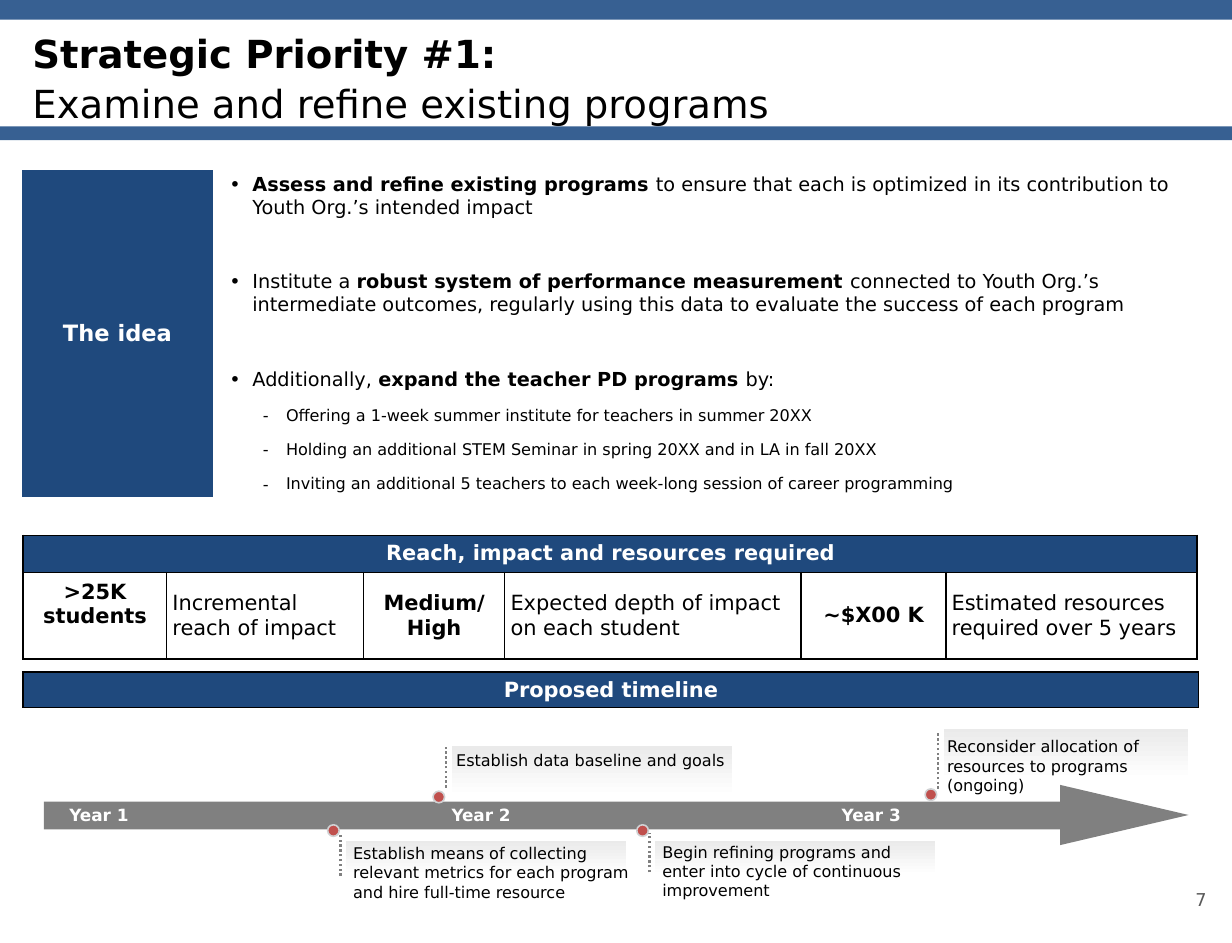
from dataclasses import dataclass
from lxml import etree
from pptx import Presentation
from pptx.dml.color import RGBColor
from pptx.enum.dml import MSO_LINE
from pptx.enum.shapes import MSO_CONNECTOR, MSO_SHAPE
from pptx.enum.text import MSO_ANCHOR, PP_ALIGN
from pptx.oxml.ns import qn
from pptx.util import Inches, Pt

RECT, OVAL, HEAD = MSO_SHAPE.RECTANGLE, MSO_SHAPE.OVAL, MSO_SHAPE.FLOWCHART_EXTRACT
STRAIGHT, DOTS = MSO_CONNECTOR.STRAIGHT, MSO_LINE.ROUND_DOT
LEFT, MID, RIGHT = PP_ALIGN.LEFT, PP_ALIGN.CENTER, PP_ALIGN.RIGHT
TOP, CENTRE = MSO_ANCHOR.TOP, MSO_ANCHOR.MIDDLE
TITLE_ONLY = 5


@dataclass(frozen=True)
class Theme:
    font: str = "DejaVu Sans"
    band: str = "376092"
    navy: str = "1F497D"
    black: str = "000000"
    white: str = "FFFFFF"
    grey: str = "808080"
    page: str = "595959"
    panel: str = "EAEAEA"
    red: str = "C0504D"
    rim: str = "D0D1D3"
    title: float = 24
    idea: float = 14
    head: float = 13
    body: float = 12
    number: float = 11
    year: float = 10.5
    small: float = 10


class Board:
    def __init__(self, slide, theme):
        self.slide, self.theme = slide, theme
        self.shapes = slide.shapes

    def style(self, para, size, color, bold=False, align=LEFT):
        para.alignment = align
        for run in para.runs:
            font = run.font
            font.name, font.size, font.bold = self.theme.font, Pt(size), bold
            font.color.rgb = RGBColor.from_string(color)

    def inset(self, item, sides):
        (item.margin_left, item.margin_top,
         item.margin_right, item.margin_bottom) = map(Inches, sides)

    def title(self, lines, box):
        item = self.shapes.title
        item.left, item.top, item.width, item.height = map(Inches, box)
        frame = item.text_frame
        frame.text = "\n".join(lines)
        frame.vertical_anchor = TOP
        self.inset(frame, (0.1, 0.07, 0.1, 0.05))
        for i, para in enumerate(frame.paragraphs):
            self.style(para, self.theme.title, self.theme.black, i == 0)
            para.space_before = Pt(2 * i)

    def shape(self, kind, box, fill, line=None, width=1.0):
        item = self.shapes.add_shape(kind, *map(Inches, box))
        item.shadow.inherit = False
        item.fill.solid()
        item.fill.fore_color.rgb = RGBColor.from_string(fill)
        if line:
            item.line.color.rgb = RGBColor.from_string(line)
            item.line.width = Pt(width)
        else:
            item.line.fill.background()
        return item

    def panel(self, box):
        white = self.theme.white
        fill = self.shape(RECT, box, white, white, 1.5).fill
        fill.gradient()
        fill.gradient_angle = 270
        for stop, color in zip(fill.gradient_stops, (self.theme.panel, white)):
            stop.color.rgb = RGBColor.from_string(color)

    def dots(self, x, top, end):
        line = self.shapes.add_connector(STRAIGHT, *map(Inches, (x, end, x, top)))
        line.line.color.rgb = RGBColor.from_string(self.theme.grey)
        line.line.width, line.line.dash_style = Pt(1.5), DOTS
        etree.SubElement(line._element.spPr, qn("a:effectLst"))

    def text(self, words, box, size, color, bold=False, align=LEFT,
             anchor=TOP, wrap=True, pad=0.05):
        frame = self.shapes.add_textbox(*map(Inches, box)).text_frame
        frame.text, frame.word_wrap, frame.vertical_anchor = words, wrap, anchor
        self.inset(frame, (pad, 0.05, pad, 0.05))
        self.style(frame.paragraphs[0], size, color, bold, align)

    def table(self, left, top, cols, rows):
        box = map(Inches, (left, top, sum(cols), sum(rows)))
        grid = self.shapes.add_table(len(rows), len(cols), *box).table
        grid.first_row = grid.horz_banding = False
        for col, width in zip(grid.columns, cols):
            col.width = Inches(width)
        for row, height in zip(grid.rows, rows):
            row.height = Inches(height)
        return grid

    def cell(self, cell, words="", size=12, color="000000", bold=False,
             align=LEFT, fill=None, edge="000000", width=1, sides="LRTB",
             anchor=CENTRE):
        para = cell.text_frame.paragraphs[0]
        para.text = words
        self.style(para, size, color, bold, align)
        cell.vertical_anchor = anchor
        if fill:
            cell.fill.solid()
            cell.fill.fore_color.rgb = RGBColor.from_string(fill)
        else:
            cell.fill.background()
        props = cell._tc.get_or_add_tcPr()
        for i, side in enumerate("LRTB"):
            line = etree.Element(qn("a:ln" + side), w=str(Pt(width)))
            if side in sides:
                paint = etree.SubElement(line, qn("a:solidFill"))
                etree.SubElement(paint, qn("a:srgbClr"), val=edge)
            else:
                etree.SubElement(line, qn("a:noFill"))
            props.insert(i, line)

    def header(self, cell, words):
        look = self.theme
        self.cell(cell, words, look.head, look.white, True, MID, look.navy)

    def bullet(self, para, parts, size, mark, indent, gap):
        for words, bold in parts:
            run = para.add_run()
            run.text = words
        self.style(para, size, self.theme.black)
        for run, (_, bold) in zip(para.runs, parts):
            run.font.bold = bold
        para.space_before = Pt(gap)
        props = para._p.get_or_add_pPr()
        props.set("marL", str(Inches(indent)))
        props.set("indent", str(Inches(-0.2)))
        etree.SubElement(props, qn("a:buFont"), typeface=self.theme.font)
        etree.SubElement(props, qn("a:buChar"), char=mark)

    def event(self, words, x, panel, stem, note, dot):
        look = self.theme
        top, width, height = panel
        self.panel((x + 0.04, top, width, height))
        self.dots(x, *stem)
        self.text(words, note, look.small, look.black)
        self.shape(OVAL, (x - 0.11, dot, 0.1, 0.1), look.red, look.rim)


POINTS = [
    [("Assess and refine existing programs ", True),
     ("to ensure that each is optimized in its contribution to "
      "Youth Org.’s intended impact", False)],
    [("Institute a ", False), ("robust system of performance measurement ", True),
     ("connected to Youth Org.’s intermediate outcomes, regularly using this "
      "data to evaluate the success of each program", False)],
    [("Additionally, ", False), ("expand the teacher PD programs ", True),
     ("by:", False)],
]
STEPS = [
    "Offering a 1-week summer institute for teachers in summer 20XX",
    "Holding an additional STEM Seminar in spring 20XX and in LA in fall 20XX",
    "Inviting an additional 5 teachers to each week-long session of career programming",
]
REACH = [">25K students", "Incremental reach of impact", "Medium/\vHigh",
         "Expected depth of impact on each student", "~$X00 K",
         "Estimated resources required over 5 years"]
# Words, stem x, panel (top, width, height), stem (top, end), note box, dot top
EVENTS = [
    ("Establish means of collecting relevant metrics for each program and hire "
     "full-time resource", 2.94, (7.25, 2.44, 0.31), (7.19, 7.56),
     (3, 7.23, 2.63, 0.61), 7.12),
    ("Begin refining programs and enter into cycle of continuous improvement",
     5.61, (7.25, 2.44, 0.31), (7.19, 7.53), (5.67, 7.22, 2.44, 0.61), 7.12),
    ("Reconsider allocation of resources to programs (ongoing)",
     8.1, (6.28, 2.13, 0.45), (6.31, 6.81), (8.13, 6.31, 2.13, 0.44), 6.81),
    ("Establish data baseline and goals",
     3.85, (6.43, 2.44, 0.45), (6.43, 6.8), (3.89, 6.43, 2.44, 0.27), 6.83),
]


def main():
    deck = Presentation()
    deck.slide_width, deck.slide_height = Inches(10.64), Inches(8.14)
    look = Theme()
    board = Board(deck.slides.add_slide(deck.slide_layouts[TITLE_ONLY]), look)

    # Title between two bands
    for top, height in ((0, 0.17), (1.09, 0.12)):
        board.shape(RECT, (0, top, 10.64, height), look.band)
    board.title(("Strategic Priority #1:", "Examine and refine existing programs"),
                (0.18, 0.19, 10.29, 0.91))

    # Timeline heading
    plan = board.table(0.2, 5.8, [10.15], [0.31, 1.54])
    board.header(plan.cell(0, 0), "Proposed timeline")
    board.cell(plan.cell(1, 0), sides="T")

    # The idea
    idea = board.table(0.15, 1.43, [1.73, 8.52], [2.9])
    board.cell(idea.cell(0, 0), "The idea", look.idea, look.white, True, MID,
               look.navy, look.white, 6)
    board.cell(idea.cell(0, 1), edge=look.white, sides="")
    frame = idea.cell(0, 1).text_frame
    items = [(parts, look.body, "•", 0.2, 32.4) for parts in POINTS]
    items += [([(step, False)], look.small, "-", 0.49, 9.7) for step in STEPS]
    for i, item in enumerate(items):
        para = frame.add_paragraph() if i else frame.paragraphs[0]
        board.bullet(para, *item)

    # Arrow and years
    board.shape(RECT, (0.38, 6.92, 8.9, 0.24), look.grey)
    board.shape(HEAD, (9.45, 6.48, 0.52, 1.11), look.grey).rotation = 90
    for i, x in enumerate((0.54, 3.84, 7.21), 1):
        board.text(f"Year {i}", (x, 6.9, 0.63, 0.27), look.year, look.white,
                   True, MID, CENTRE, False)

    # Events
    for event in EVENTS:
        board.event(*event)

    # Reach, impact and resources
    reach = board.table(0.2, 4.62, [1.24, 1.7, 1.22, 2.56, 1.25, 2.17], [0.32, 0.75])
    reach.cell(0, 0).merge(reach.cell(0, 5))
    for i, words in enumerate(REACH):
        board.header(reach.cell(0, i), "" if i else "Reach, impact and resources required")
        key, cell = i % 2 == 0, reach.cell(1, i)
        board.cell(cell, words, look.head, look.black, key, MID if key else LEFT)
        board.inset(cell, (0.05, 0.05, 0.05, 0.05 if i else 0.25))

    # Page number
    board.text("7", (8.13, 7.55, 2.39, 0.43), look.number, look.page,
               align=RIGHT, anchor=CENTRE, pad=0.1)
    deck.save("out.pptx")


if __name__ == "__main__":
    main()
